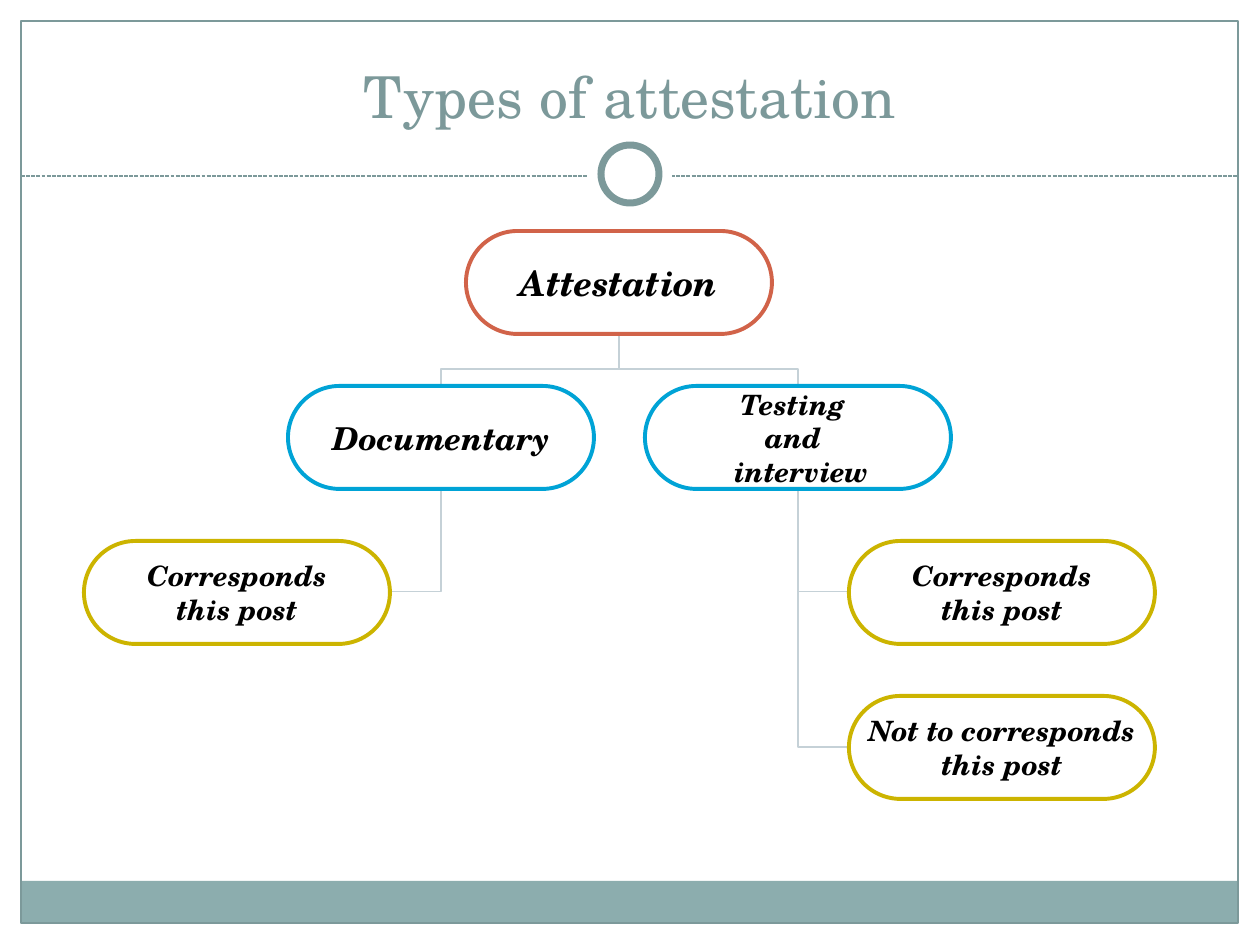
"""Builds the slide "Types of attestation" with its tree of outlined boxes."""
from lxml.etree import SubElement
from pptx import Presentation
from pptx.dml.color import RGBColor
from pptx.enum.dml import MSO_LINE as Dash
from pptx.enum.shapes import MSO_CONNECTOR as Link, MSO_SHAPE as Shape
from pptx.enum.text import MSO_ANCHOR as Anchor, PP_ALIGN as Align
from pptx.oxml.ns import qn
from pptx.util import Pt

PX = 914400 // 126
TEAL, BAND, WHITE, BLACK = "7C999A", "8CADAE", "FFFFFF", "000000"
RED, BLUE, GOLD, GREY = "D16349", "00A3D6", "CCB400", "C5D1D7"
BOX_W, BOX_H = 306, 103
TOP, LEVEL_STEP = 231, 155


def emu(*lengths):
    return [round(length * PX) for length in lengths]


def rgb(color):
    return RGBColor.from_string(color)


class Painter:
    font = "TeX Gyre Schola"

    def __init__(self, deck):
        self.slide = deck.slides.add_slide(deck.slide_layouts[6])

    def shape(self, kind, area, fill=None, line=None, width=0.75):
        shape = self.slide.shapes.add_shape(kind, *emu(*area))
        shape.shadow.inherit = False
        if fill:
            shape.fill.solid()
            shape.fill.fore_color.rgb = rgb(fill)
        else:
            shape.fill.background()
        if line:
            shape.line.color.rgb = rgb(line)
            shape.line.width = Pt(width)
        else:
            shape.line.fill.background()
        return shape

    def text(self, frame, lines, size, color, strong=False):
        for index, (words, shift) in enumerate(lines):
            para = frame.add_paragraph() if index else frame.paragraphs[0]
            para.alignment = Align.CENTER
            if shift:
                side = "marL" if shift > 0 else "marR"
                para._p.get_or_add_pPr().set(side, str(2 * abs(shift) * PX))
            span = para.add_run()
            span.text = words
            font = span.font
            font.name, font.size = self.font, Pt(size)
            font.bold = font.italic = strong
            font.color.rgb = rgb(color)

    def title(self, words, area):
        frame = self.slide.shapes.add_textbox(*emu(*area)).text_frame
        frame.word_wrap = True
        frame.vertical_anchor = Anchor.BOTTOM
        self.text(frame, [(words, 0)], 33, TEAL)

    def box(self, left, top, color, size, lines):
        box = self.shape(Shape.ROUNDED_RECTANGLE, (left, top, BOX_W, BOX_H),
                         line=color, width=2.25)
        box.adjustments[0] = 0.5
        frame = box.text_frame
        frame.margin_left = frame.margin_right = 0
        frame.margin_top = frame.margin_bottom = 0
        frame.word_wrap = True
        frame.vertical_anchor = Anchor.MIDDLE
        self.text(frame, lines, size, BLACK, strong=True)

    def line(self, kind, start, end, color):
        line = self.slide.shapes.add_connector(kind, *emu(*start, *end))
        line.line.color.rgb = rgb(color)
        line.line.width = Pt(0.75)
        SubElement(line._element.spPr, qn("a:effectLst"))
        return line

    def corner(self, start, end):
        line = self.line(Link.ELBOW, start, end, GREY)
        line._element.spPr.find(qn("a:prstGeom")).set("prst", "bentConnector2")

    def branch(self, start, end):
        (x1, y1), (x2, y2) = start, end
        side = 1 if x2 > x1 else -1
        x, y = (x1 + x2) / 2, (y1 + y2) / 2
        rise, run = side * (y1 - y2) / 2, abs(x2 - x1) / 2
        line = self.line(Link.ELBOW, (x - rise, y - run), (x + rise, y + run), GREY)
        properties = line._element.spPr
        turn = 270 if side > 0 else 90
        properties.find(qn("a:xfrm")).set("rot", str(turn * 60000))
        guides = properties.find(qn("a:prstGeom")).find(qn("a:avLst"))
        SubElement(guides, qn("a:gd"), name="adj1", fmla="val 33000")


def main():
    deck = Presentation()
    deck.slide_width, deck.slide_height = emu(1260, 945)
    page = Painter(deck)

    page.shape(Shape.RECTANGLE, (21, 881, 1217, 43), fill=BAND)
    page.shape(Shape.RECTANGLE, (21, 21, 1217, 902), line=TEAL)
    rule = page.line(Link.STRAIGHT, (21, 176), (1238, 176), TEAL)
    rule.line.dash_style = Dash.SQUARE_DOT
    page.shape(Shape.OVAL, (588, 132, 84, 84), fill=WHITE)
    page.shape(Shape.OVAL, (601, 145, 58, 58), fill=WHITE, line=TEAL, width=4)
    page.title("Types of attestation", (42, 31, 1176, 105))

    suits = [("Corresponds", 0), ("this post", 0)]
    fails = [("Not to corresponds", 0), ("this post", 0)]
    testing = [("Testing", -5), ("and", 0), ("interview", 8)]
    nodes = {
        "root": (466, 0, RED, 20, [("Attestation", 0)]),
        "documentary": (288, 1, BLUE, 18, [("Documentary", 0)]),
        "testing": (645, 1, BLUE, 16, testing),
        "documentary suits": (84, 2, GOLD, 16, suits),
        "testing suits": (849, 2, GOLD, 16, suits),
        "testing fails": (849, 3, GOLD, 16, fails),
    }
    links = [("testing", "testing fails"), ("testing", "testing suits"),
             ("documentary", "documentary suits"),
             ("root", "testing"), ("root", "documentary")]

    for parent, child in links:
        parent_left, parent_level = nodes[parent][:2]
        left, level = nodes[child][:2]
        top = TOP + level * LEVEL_STEP
        foot = (parent_left + BOX_W // 2, TOP + parent_level * LEVEL_STEP + BOX_H)
        if parent == "root":
            page.branch((left + BOX_W // 2, top), foot)
        else:
            edge = left if left > parent_left else left + BOX_W
            page.corner((edge, top + BOX_H // 2), foot)

    for left, level, color, size, lines in nodes.values():
        page.box(left, TOP + level * LEVEL_STEP, color, size, lines)

    deck.save("out.pptx")


if __name__ == "__main__":
    main()
